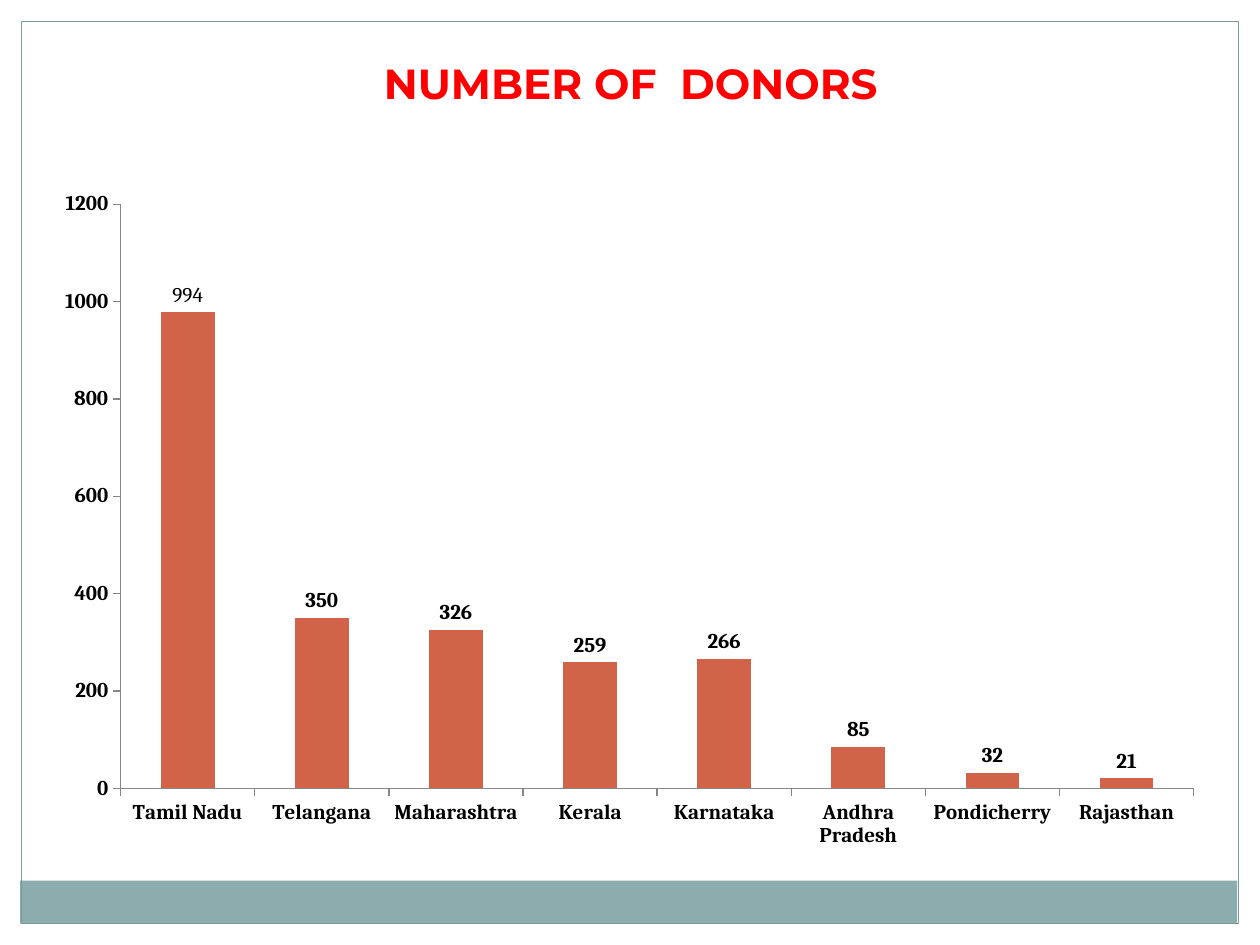
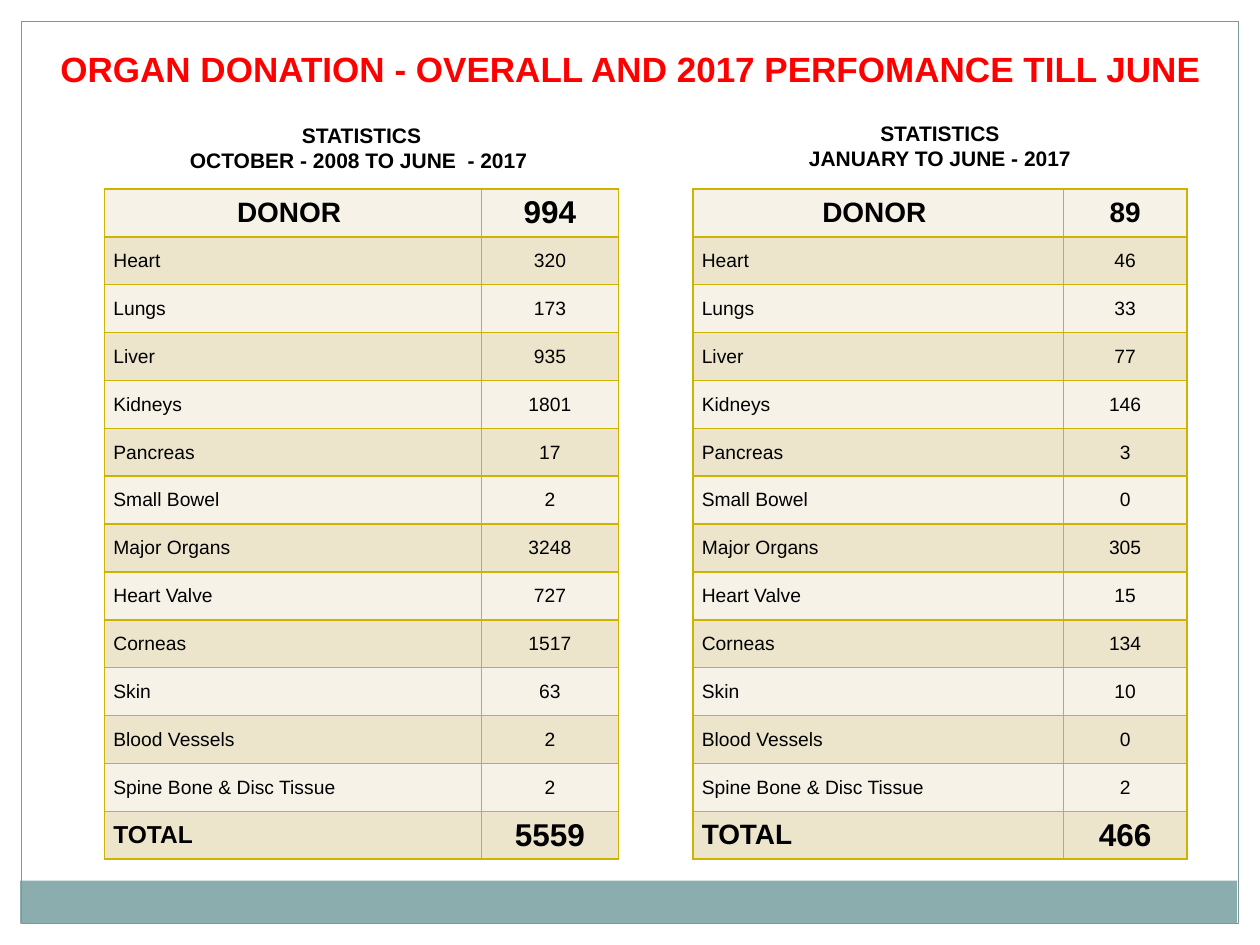
from dataclasses import dataclass
from itertools import cycle

from lxml.etree import SubElement
from pptx import Presentation
from pptx.chart.data import CategoryChartData
from pptx.dml.color import RGBColor as RGB
from pptx.enum.chart import XL_CHART_TYPE as ChartType, XL_LABEL_POSITION as LabelPos, XL_TICK_MARK as Tick
from pptx.enum.shapes import MSO_SHAPE as Shape
from pptx.enum.text import MSO_ANCHOR as Anchor, PP_ALIGN as Align
from pptx.oxml.ns import qn
from pptx.util import Emu, Pt

PX = 9144  # EMU per px, 100 px to the inch


@dataclass(frozen=True)
class Theme:
    white: str = "FFFFFF"
    black: str = "000000"
    title: str = "FF0000"
    band: str = "8CADAE"
    frame: str = "7C999A"
    bar: str = "D16349"
    axis: str = "868686"
    rule: str = "CCB400"
    stripes: tuple[str, str] = ("F6F2E7", "ECE5CC")
    font: str = "Arial"
    chart_font: str = "Cambria"
    label_size: int = 12
    body_size: int = 11


@dataclass(frozen=True)
class Box:
    x: int
    y: int
    w: int
    h: int

    def emu(self) -> tuple[Emu, ...]:
        return tuple(Emu(v * PX) for v in (self.x, self.y, self.w, self.h))


@dataclass(frozen=True)
class Panel:
    caption: Box
    period: str
    table: Box
    value_width: int
    values: tuple[int, ...]
    donor_size: int
    total_label_size: int


T = Theme()
PAGE = Box(0, 0, 1000, 750)
FRAME = Box(17, 17, 966, 716)
BANDS = (
    (Box(0, 0, 1000, 17), T.white),
    (Box(983, 0, 17, 750), T.white),
    (Box(0, 0, 17, 750), T.white),
    (Box(16, 699, 966, 34), T.band),
)

DONORS = {"Tamil Nadu": 978, "Telangana": 350, "Maharashtra": 326, "Kerala": 259,
          "Karnataka": 266, "Andhra Pradesh": 85, "Pondicherry": 32, "Rajasthan": 21}
TAMIL_NADU_LABEL = "994"

ROW_LABELS = ("DONOR ", "Heart", "Lungs", "Liver", "Kidneys", "Pancreas", "Small Bowel",
              "Major Organs", "Heart Valve", "Corneas", "Skin", "Blood Vessels",
              "Spine Bone & Disc Tissue", "TOTAL")
ROW_HEIGHT = 38
PANELS = (
    Panel(Box(83, 92, 408, 50), "OCTOBER - 2008 TO JUNE  - 2017 ", Box(83, 150, 408, 533), 109,
          (994, 320, 173, 935, 1801, 17, 2, 3248, 727, 1517, 63, 2, 2, 5559), 18, 14),
    Panel(Box(550, 91, 392, 50), "JANUARY TO JUNE - 2017", Box(550, 150, 392, 533), 98,
          (89, 46, 33, 77, 146, 3, 0, 305, 15, 134, 10, 0, 2, 466), 16, 16),
)


def style_font(font, size: int, color: str = T.black, name: str = T.font, bold: bool = True) -> None:
    font.size, font.name, font.bold = Pt(size), name, bold
    font.color.rgb = RGB.from_string(color)


def add_rect(s, box: Box, fill: str | None = None, line: str | None = None) -> None:
    sp = s.shapes.add_shape(Shape.RECTANGLE, *box.emu())
    sp.shadow.inherit = False
    if fill:
        sp.fill.solid()
        sp.fill.fore_color.rgb = RGB.from_string(fill)
    else:
        sp.fill.background()
    if line:
        sp.line.color.rgb = RGB.from_string(line)
        sp.line.width = Pt(0.75)
    else:
        sp.line.fill.background()


def add_text(s, box: Box, lines: tuple[str, ...], size: int,
             color: str = T.black, font: str = T.font) -> None:
    tf = s.shapes.add_textbox(*box.emu()).text_frame
    tf.word_wrap = True
    for i, line in enumerate(lines):
        p = tf.add_paragraph() if i else tf.paragraphs[0]
        p.text = line
        p.alignment = Align.CENTER
        style_font(p.font, size, color, font)


def add_framed_slide(prs, title: str, box: Box, size: int, font: str):
    s = prs.slides.add_slide(prs.slide_layouts[6])
    for band, fill in BANDS:
        add_rect(s, band, fill)
    add_rect(s, FRAME, line=T.frame)
    add_text(s, box, (title,), size, T.title, font)
    return s


def add_donor_chart(s, box: Box) -> None:
    data = CategoryChartData()
    data.categories = list(DONORS)
    data.add_series("Series 1", list(DONORS.values()))
    chart = s.shapes.add_chart(ChartType.COLUMN_CLUSTERED, *box.emu(), data).chart
    chart.has_legend = chart.has_title = False
    style_font(chart.font, 10, name=T.chart_font, bold=False)

    # Axes
    for axis in (chart.category_axis, chart.value_axis):
        axis.has_major_gridlines = False
        axis.major_tick_mark = Tick.OUTSIDE
        axis.format.line.color.rgb = RGB.from_string(T.axis)
        style_font(axis.tick_labels.font, T.label_size, name=T.chart_font)
    chart.value_axis.minimum_scale = 0
    chart.value_axis.maximum_scale = 1200
    chart.value_axis.major_unit = 200

    # Bars and labels
    plot = chart.plots[0]
    plot.gap_width = 150
    plot.vary_by_categories = False
    series = plot.series[0]
    series.format.fill.solid()
    series.format.fill.fore_color.rgb = RGB.from_string(T.bar)
    labels = series.data_labels
    labels.show_value = True
    labels.position = LabelPos.OUTSIDE_END
    style_font(labels.font, T.label_size, name=T.chart_font)
    label = series.points[0].data_label
    p = label.text_frame.paragraphs[0]
    r = p.add_run()
    r.text = TAMIL_NADU_LABEL
    style_font(r.font, T.label_size, name=T.chart_font, bold=False)
    label.position = LabelPos.OUTSIDE_END


def add_borders(cell) -> None:
    pr = cell._tc.get_or_add_tcPr()
    for i, side in enumerate(("lnL", "lnR", "lnT", "lnB")):
        ln = pr.makeelement(qn(f"a:{side}"), {"w": str(Pt(1))})
        fill = SubElement(ln, qn("a:solidFill"))
        SubElement(fill, qn("a:srgbClr"), val=T.rule)
        pr.insert(i, ln)


def fill_cell(cell, text: str, fill: str, size: int, bold: bool, align: Align) -> None:
    cell.fill.solid()
    cell.fill.fore_color.rgb = RGB.from_string(fill)
    cell.vertical_anchor = Anchor.MIDDLE
    cell.margin_left = cell.margin_right = Emu(7 * PX)
    cell.margin_top = cell.margin_bottom = 0
    p = cell.text_frame.paragraphs[0]
    p.text = text
    p.alignment = align
    style_font(p.font, size, bold=bold)
    add_borders(cell)


def add_panel(s, panel: Panel) -> None:
    add_text(s, panel.caption, ("STATISTICS", panel.period), T.label_size)
    last = len(ROW_LABELS) - 1
    table = s.shapes.add_table(last + 1, 2, *panel.table.emu()).table
    table.first_row = table.horz_banding = False
    for col, width in zip(table.columns, (panel.table.w - panel.value_width, panel.value_width)):
        col.width = Emu(width * PX)
    # Larger bold type in the first and last rows: (label size, value size)
    sizes = {0: (16, panel.donor_size), last: (panel.total_label_size, 18)}
    for i, (label, value, fill) in enumerate(zip(ROW_LABELS, panel.values, cycle(T.stripes))):
        table.rows[i].height = Emu(ROW_HEIGHT * PX)
        label_size, value_size = sizes.get(i, (T.body_size, T.body_size))
        align = Align.JUSTIFY if i else Align.CENTER
        fill_cell(table.cell(i, 0), label, fill, label_size, i in sizes, align)
        fill_cell(table.cell(i, 1), str(value), fill, value_size, i in sizes, Align.CENTER)


def main() -> None:
    prs = Presentation()
    prs.slide_width, prs.slide_height = PAGE.emu()[2:]

    # Donors by state
    s = add_framed_slide(prs, "NUMBER OF  DONORS", Box(17, 41, 967, 50), 24, "Montserrat")
    add_donor_chart(s, Box(33, 142, 933, 542))

    # Organs donated, overall and 2017
    s = add_framed_slide(prs, "ORGAN DONATION - OVERALL AND 2017 PERFOMANCE TILL JUNE",
                         Box(17, 33, 967, 44), 20, T.font)
    for panel in PANELS:
        add_panel(s, panel)

    prs.save("out.pptx")


if __name__ == "__main__":
    main()
